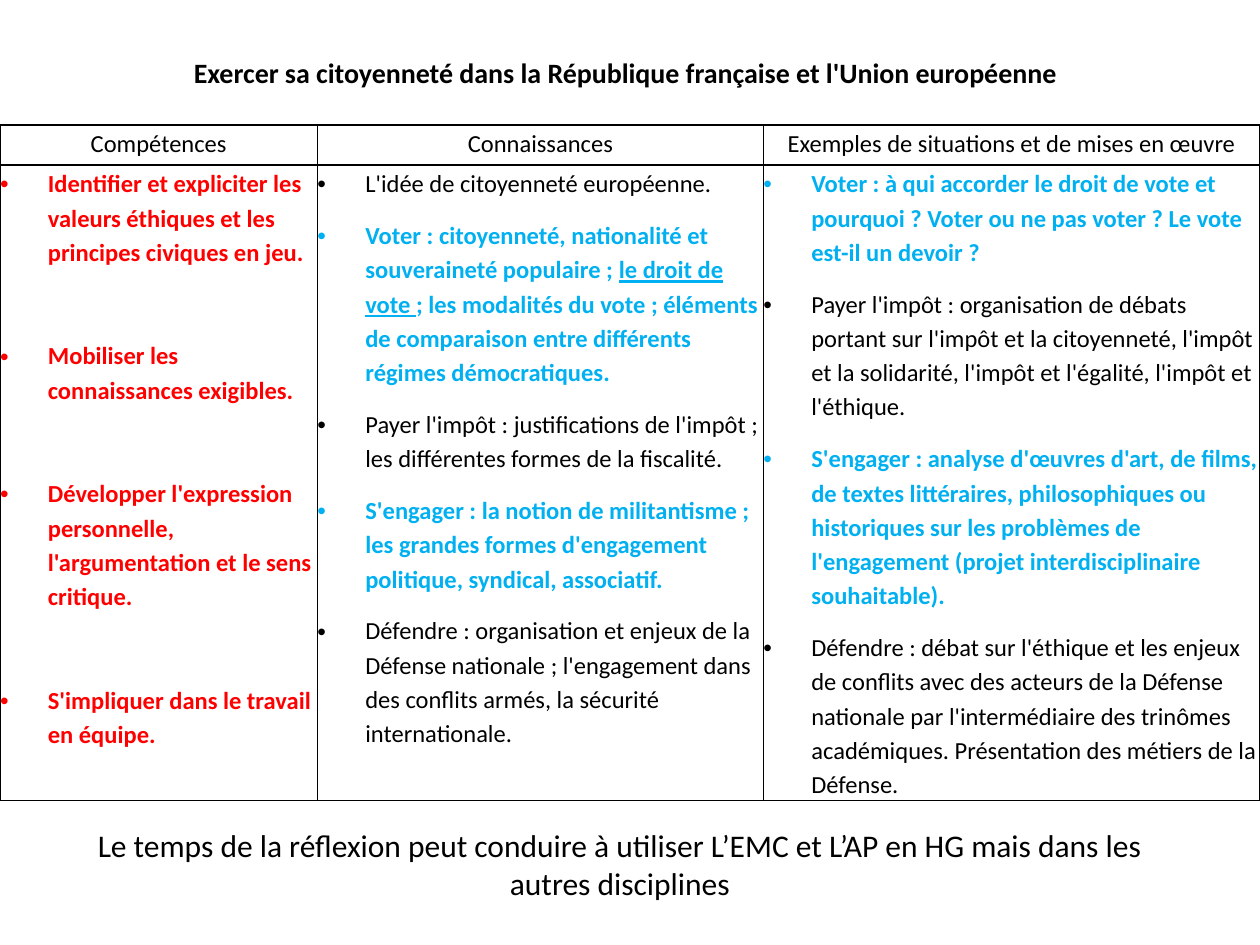
from dataclasses import dataclass

from lxml.etree import SubElement
from pptx import Presentation
from pptx.dml.color import RGBColor
from pptx.enum.text import MSO_ANCHOR, MSO_AUTO_SIZE, PP_ALIGN
from pptx.oxml.ns import qn
from pptx.util import Inches, Pt


@dataclass(frozen=True)
class Theme:
    font: str = "Calibri"
    black: str = "000000"
    red: str = "FF0000"
    blue: str = "00B0F0"
    title: int = 16
    body: int = 14
    note: int = 18


theme = Theme()


def add_run(p, text, size, color=theme.black, bold=False, underline=False):
    r = p.add_run()
    r.text = text
    r.font.name = theme.font
    r.font.size = Pt(size)
    r.font.bold = bold
    r.font.underline = underline
    r.font.color.rgb = RGBColor.from_string(color)


def add_border(cell):
    tcPr = cell._tc.get_or_add_tcPr()
    for side in ("a:lnL", "a:lnR", "a:lnT", "a:lnB"):
        ln = SubElement(tcPr, qn(side), w=str(Pt(1)))
        fill = SubElement(ln, qn("a:solidFill"))
        SubElement(fill, qn("a:srgbClr"), val=theme.black)


prs = Presentation()
prs.slide_width = Inches(10)
prs.slide_height = Inches(7.5)
s = prs.slides.add_slide(prs.slide_layouts[5])

title = s.shapes.title
title.left, title.top = Inches(0.2), Inches(0.12)
title.width, title.height = Inches(9.53), Inches(0.91)
tf = title.text_frame
tf.word_wrap = True
tf.auto_size = MSO_AUTO_SIZE.NONE
tf.vertical_anchor = MSO_ANCHOR.MIDDLE
p = tf.paragraphs[0]
p.alignment = PP_ALIGN.CENTER
add_run(p, "Exercer sa citoyenneté dans la République française et l'Union européenne",
        theme.title, bold=True)

headers = ["Compétences", "Connaissances", "Exemples de situations et de mises en œuvre"]
skills = [
    "Identifier et expliciter les valeurs éthiques et les principes civiques en jeu.",
    "Mobiliser les connaissances exigibles.",
    "Développer l'expression personnelle, l'argumentation et le sens critique.",
    "S'impliquer dans le travail en équipe.",
]
knowledge = [
    (theme.black, ["L'idée de citoyenneté européenne."]),
    (theme.blue, ["Voter : citoyenneté, nationalité et souveraineté populaire ; ",
                  "le droit de vote ",
                  "; les modalités du vote ; éléments de comparaison entre différents "
                  "régimes démocratiques."]),
    (theme.black, ["Payer l'impôt : justifications de l'impôt ; les différentes formes "
                   "de la fiscalité."]),
    (theme.blue, ["S'engager : la notion de militantisme ; les grandes formes "
                  "d'engagement politique, syndical, associatif."]),
    (theme.black, ["Défendre : organisation et enjeux de la Défense nationale ; "
                   "l'engagement dans des conflits armés, la sécurité internationale."]),
]
examples = [
    (theme.blue, ["Voter : à qui accorder le droit de vote et pourquoi ? Voter ou ne pas "
                  "voter ? Le vote est-il un devoir ?"]),
    (theme.black, ["Payer l'impôt : organisation de débats portant sur l'impôt et la "
                   "citoyenneté, l'impôt et la solidarité, l'impôt et l'égalité, l'impôt "
                   "et l'éthique."]),
    (theme.blue, ["S'engager : analyse d'œuvres d'art, de films, de textes littéraires, "
                  "philosophiques ou historiques sur les problèmes de l'engagement "
                  "(projet interdisciplinaire souhaitable)."]),
    (theme.black, ["Défendre : débat sur l'éthique et les enjeux de conflits avec des "
                   "acteurs de la Défense nationale par l'intermédiaire des trinômes "
                   "académiques. Présentation des métiers de la Défense."]),
]
columns = [
    ([(theme.red, [skill]) for skill in skills], 39.6),
    (knowledge, 10),
    (examples, 10),
]

table = s.shapes.add_table(2, 3, 0, Inches(0.99), Inches(10), Inches(5.31)).table
table.first_row = False
table.horz_banding = False
for col, width in zip(table.columns, (2.52, 3.54, 3.94)):
    col.width = Inches(width)
for row, height in zip(table.rows, (0.32, 4.99)):
    row.height = Inches(height)

for cell in table.iter_cells():
    cell.margin_left = cell.margin_right = cell.margin_top = cell.margin_bottom = 0
    add_border(cell)
    cell.fill.background()

for c, (header, (items, gap)) in enumerate(zip(headers, columns)):
    p = table.cell(0, c).text_frame.paragraphs[0]
    p.alignment = PP_ALIGN.CENTER
    p.line_spacing = 1.15
    p.space_after = Pt(10)
    add_run(p, header, theme.body)

    tf = table.cell(1, c).text_frame
    for i, (color, parts) in enumerate(items):
        p = tf.add_paragraph() if i else tf.paragraphs[0]
        p.line_spacing = 1.15
        p.space_after = Pt(gap if i < len(items) - 1 else 10)
        pPr = p._p.get_or_add_pPr()
        pPr.set("marL", str(Inches(0.38)))
        pPr.set("indent", str(-Inches(0.38)))
        SubElement(pPr, qn("a:buFont"), typeface="Arial")
        SubElement(pPr, qn("a:buChar"), char="•")
        for n, part in enumerate(parts):
            add_run(p, part, theme.body, color, color != theme.black, n == 1)

note = s.shapes.add_textbox(Inches(0.51), Inches(6.51), Inches(8.82), Inches(0.71))
tf = note.text_frame
tf.word_wrap = True
p = tf.paragraphs[0]
p.alignment = PP_ALIGN.CENTER
add_run(p, "Le temps de la réflexion peut conduire à utiliser L’EMC et L’AP en HG "
           "mais dans les autres disciplines", theme.note)

prs.save("out.pptx")
